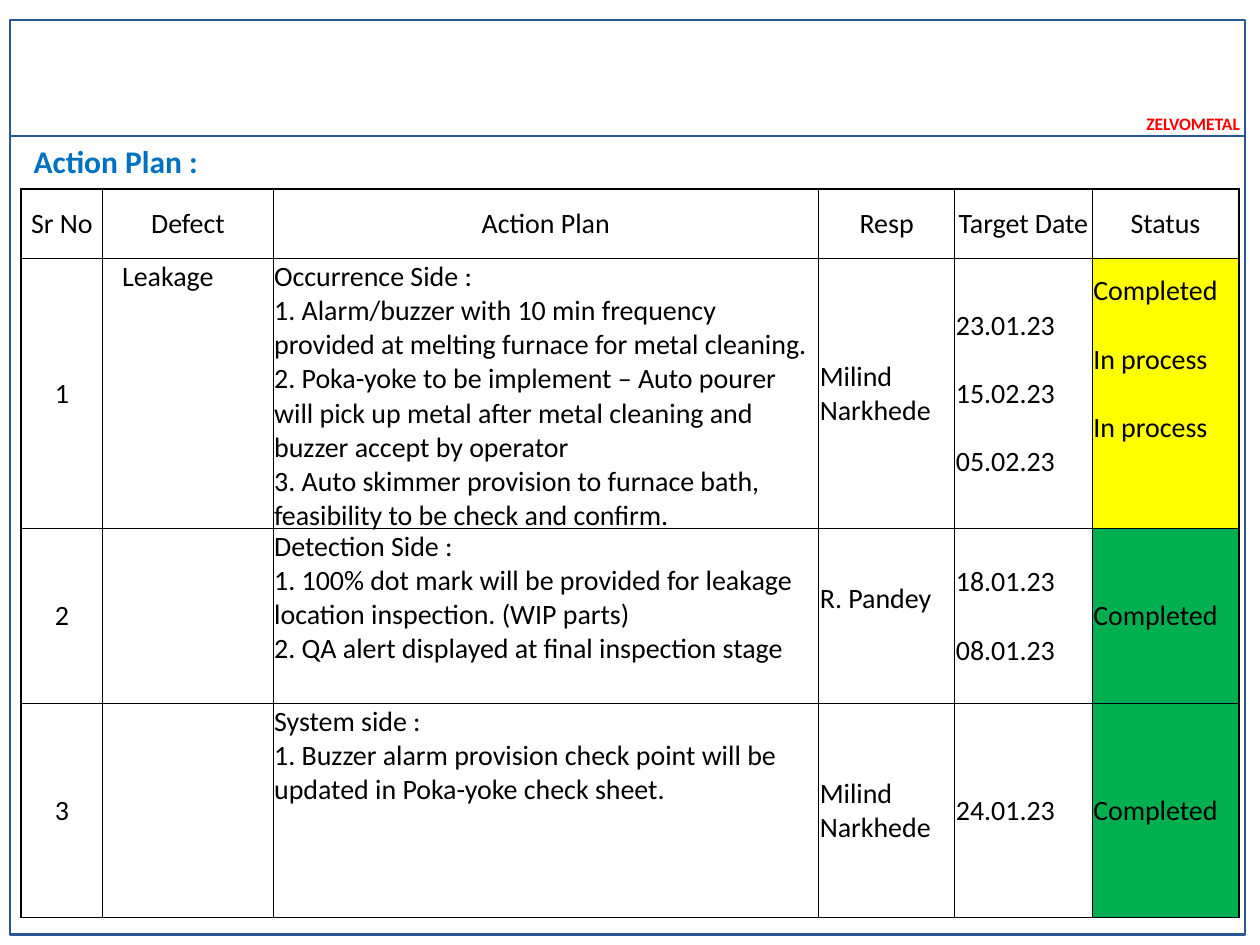
from lxml import etree
from pptx import Presentation
from pptx.dml.color import RGBColor
from pptx.enum import shapes, text
from pptx.oxml import ns
from pptx.util import Pt

BLUE = RGBColor(0x2A, 0x56, 0x96)
TITLE_BLUE = RGBColor(0x00, 0x70, 0xC0)
RED = RGBColor(0xFF, 0x00, 0x00)
BLACK = RGBColor(0x00, 0x00, 0x00)
YELLOW = RGBColor(0xFF, 0xFF, 0x00)
GREEN = RGBColor(0x00, 0xB0, 0x50)
LEFT, CENTER, JUSTIFY = (text.PP_ALIGN.LEFT, text.PP_ALIGN.CENTER,
                         text.PP_ALIGN.JUSTIFY)
TOP, MIDDLE = text.MSO_ANCHOR.TOP, text.MSO_ANCHOR.MIDDLE
LINE = 19.5

COLUMNS = [46.8, 97.2, 311.8, 77.8, 78.5, 83.9]
ROW_HEIGHTS = [39.6, 148.3, 100.1, 122.4]
HEADINGS = ["Sr No", "Defect", "Action Plan", "Resp", "Target Date", "Status"]
ACTIONS = [
    (["1"], ["Leakage"],
     ["Occurrence Side :",
      "1. Alarm/buzzer with 10 min frequency provided at melting furnace for metal cleaning.",
      "2. Poka-yoke to be implement – Auto pourer will pick up metal after metal cleaning and buzzer accept by operator",
      "3. Auto skimmer provision to furnace bath, feasibility to be check and confirm."],
     ["Milind Narkhede"], ["23.01.23", "15.02.23", "05.02.23"],
     ["Completed", "In process", "In process"]),
    (["2"], [],
     ["Detection Side :",
      "1. 100% dot mark will be provided for leakage location inspection. (WIP parts)",
      "2. QA alert displayed at final inspection stage"],
     ["R. Pandey"], ["18.01.23", "08.01.23"], ["Completed"]),
    (["3"], [],
     ["System side :",
      "1. Buzzer alarm provision check point will be updated in Poka-yoke check sheet."],
     ["Milind Narkhede"], ["24.01.23"], ["Completed"]),
]
COLUMN_FORMATS = [
    dict(align=CENTER, anchor=MIDDLE), dict(left=11), {},
    dict(anchor=MIDDLE), dict(anchor=MIDDLE, gap=LINE),
    dict(anchor=MIDDLE, gap=LINE),
]
SPECIAL_FORMATS = {
    (1, 5): dict(align=JUSTIFY, bottom=2 * LINE),
    (2, 3): dict(bottom=LINE),
}
STATUS_FILLS = {1: YELLOW, 2: GREEN, 3: GREEN}


def write(frame, lines, size=16, color=BLACK, bold=False, align=LEFT, gap=0):
    """Fill a text frame with one formatted paragraph per line."""
    for index, line in enumerate(lines):
        paragraph = frame.paragraphs[0] if index == 0 else frame.add_paragraph()
        paragraph.alignment = align
        paragraph.space_before = Pt(gap if index else 0)
        run = paragraph.add_run()
        run.text = line
        run.font.name = "Calibri"
        run.font.size = Pt(size)
        run.font.bold = bold
        run.font.color.rgb = color


def add_frame(slide, left, top, width, height):
    """Draw the page border, the header rule and the company name."""
    border = slide.shapes.add_shape(
        shapes.MSO_SHAPE.RECTANGLE, Pt(left), Pt(top), Pt(width), Pt(height))
    border.shadow.inherit = False
    border.fill.background()
    rule_top = Pt(top + 66.2)
    rule = slide.shapes.add_connector(
        shapes.MSO_CONNECTOR.STRAIGHT, Pt(left), rule_top, Pt(left + width), rule_top)
    etree.SubElement(rule._element.spPr, ns.qn("a:effectLst"))
    for outline in (border.line, rule.line):
        outline.color.rgb = BLUE
        outline.width = Pt(1.5)
    company = slide.shapes.add_textbox(
        Pt(left + 642.2), Pt(top + 49.7), Pt(84.2), Pt(18)).text_frame
    company.word_wrap = True
    write(company, ["ZELVOMETAL"], size=10, color=RED, bold=True)


def add_title(slide, left, top, width, height):
    """Place the slide title in the title placeholder."""
    title = slide.shapes.title
    title.left, title.top = Pt(left), Pt(top)
    title.width, title.height = Pt(width), Pt(height)
    frame = title.text_frame
    frame.auto_size = text.MSO_AUTO_SIZE.NONE
    frame.vertical_anchor = MIDDLE
    frame.margin_top, frame.margin_bottom = 0, Pt(20)
    write(frame, ["Action Plan :"], size=18, color=TITLE_BLUE, bold=True)


def add_borders(cell, **widths):
    """Draw black cell borders of the given widths in points."""
    properties = cell._tc.get_or_add_tcPr()
    for side, width in widths.items():
        edge = etree.SubElement(properties, ns.qn(f"a:ln{side}"), w=str(Pt(width)))
        fill = etree.SubElement(edge, ns.qn("a:solidFill"))
        etree.SubElement(fill, ns.qn("a:srgbClr"), val=str(BLACK))


def fill_cell(cell, lines, fill=None, anchor=TOP, left=0.7, bottom=0, **style):
    """Set the fill, margins and text of one cell."""
    if fill is None:
        cell.fill.background()
    else:
        cell.fill.solid()
        cell.fill.fore_color.rgb = fill
    cell.margin_left, cell.margin_bottom = Pt(left), Pt(bottom)
    cell.margin_right = cell.margin_top = Pt(0.7)
    cell.vertical_anchor = anchor
    write(cell.text_frame, lines, **style)


def add_action_table(slide, left, top):
    """Build the action plan table from its headings and actions."""
    rows = [[[heading] for heading in HEADINGS], *ACTIONS]
    table = slide.shapes.add_table(
        len(rows), len(COLUMNS), Pt(left), Pt(top),
        Pt(sum(COLUMNS)), Pt(sum(ROW_HEIGHTS))).table
    table.first_row = table.horz_banding = False
    for column, width in zip(table.columns, COLUMNS):
        column.width = Pt(width)
    for row, height in zip(table.rows, ROW_HEIGHTS):
        row.height = Pt(height)
    last = len(COLUMNS) - 1
    for r, contents in enumerate(rows):
        for c, lines in enumerate(contents):
            style = COLUMN_FORMATS[c] if r else COLUMN_FORMATS[0]
            style = {**style, **SPECIAL_FORMATS.get((r, c), {})}
            fill = STATUS_FILLS.get(r) if c == last else None
            cell = table.cell(r, c)
            add_borders(cell, L=0.5 if c else 1, R=1 if c == last else 0.5,
                        T=0.5 if r else 1, B=0.5)
            fill_cell(cell, lines, fill=fill, **style)


def main():
    """Create the action plan slide and save it."""
    deck = Presentation()
    deck.slide_width, deck.slide_height = Pt(720), Pt(540)
    slide = deck.slides.add_slide(deck.slide_layouts[5])
    add_frame(slide, 5.8, 11.5, 705.6, 522.7)
    add_title(slide, 12, 84, 696, 36)
    add_action_table(slide, 12, 108)
    deck.save("out.pptx")


if __name__ == "__main__":
    main()
